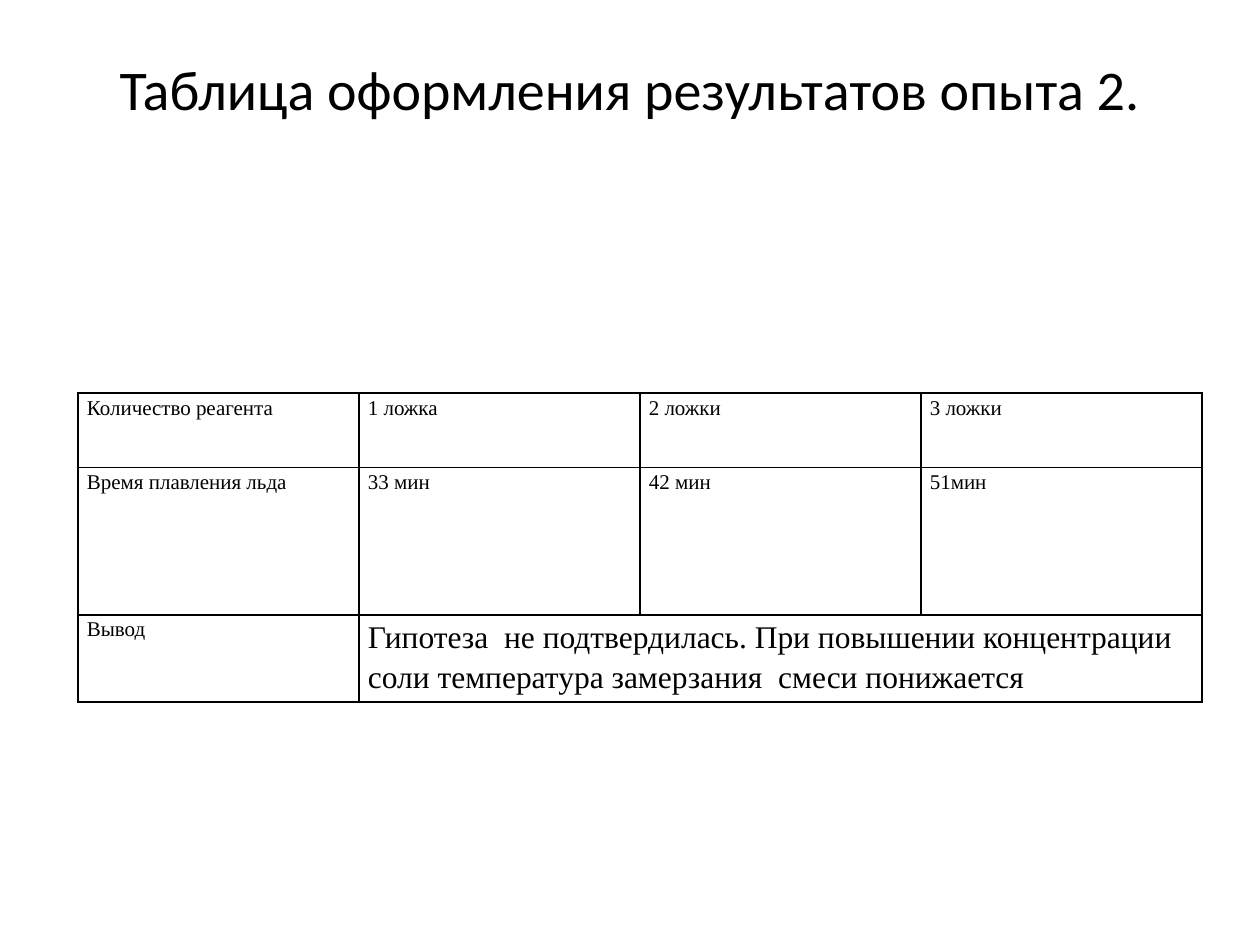
"""Build a slide with the results table of the second experiment."""
from lxml import etree
from pptx import Presentation
from pptx.dml.color import RGBColor
from pptx.enum.text import MSO_ANCHOR, PP_ALIGN
from pptx.oxml.ns import qn
from pptx.util import Inches, Pt

TITLE = "Таблица оформления результатов опыта 2."
ROWS = [
    ["Количество реагента", "1 ложка", "2 ложки", "3 ложки"],
    ["Время плавления льда", "33 мин", "42 мин", "51мин"],
    ["Вывод", "Гипотеза  не подтвердилась. При повышении концентрации "
              "соли температура замерзания  смеси понижается"],
]
ROW_HEIGHTS = [0.59, 1.17, 0.59]
COL_WIDTH = 2.23
COLS = len(ROWS[0])
BODY_SIZE, CONCLUSION_SIZE = 12, 18
BLACK = RGBColor(0, 0, 0)
MIDDLE, TOP = MSO_ANCHOR.MIDDLE, MSO_ANCHOR.TOP
CENTER = PP_ALIGN.CENTER


def add_run(p, text, size, font):
    r = p.add_run()
    r.text = text
    r.font.size = Pt(size)
    r.font.name = font
    r.font.color.rgb = BLACK


def set_borders(cell):
    tc_pr = cell._tc.get_or_add_tcPr()
    for i, side in enumerate(("a:lnL", "a:lnR", "a:lnT", "a:lnB")):
        ln = etree.Element(qn(side), w=str(Pt(1)))
        fill = etree.SubElement(ln, qn("a:solidFill"))
        etree.SubElement(fill, qn("a:srgbClr"), val=str(BLACK))
        tc_pr.insert(i, ln)


def add_title(s):
    tf = s.shapes.add_textbox(Inches(0.5), Inches(0.3), Inches(9), Inches(1.25)).text_frame
    tf.word_wrap = True
    tf.vertical_anchor = MIDDLE
    tf.margin_bottom = Inches(0.5)
    p = tf.paragraphs[0]
    p.alignment = CENTER
    add_run(p, TITLE, 32, "Calibri")


def add_results(s):
    table = s.shapes.add_table(len(ROWS), COLS, Inches(0.62), Inches(3.12),
                               Inches(COL_WIDTH * COLS), Inches(sum(ROW_HEIGHTS))).table
    table.first_row = table.horz_banding = False
    for col in table.columns:
        col.width = Inches(COL_WIDTH)
    for row, height in zip(table.rows, ROW_HEIGHTS):
        row.height = Inches(height)
    last = len(ROWS) - 1
    table.cell(last, 1).merge(table.cell(last, COLS - 1))
    for i in range(len(ROWS)):
        for j in range(COLS):
            cell = table.cell(i, j)
            cell.fill.background()
            set_borders(cell)
            cell.margin_left = cell.margin_right = Inches(0.07)
            cell.margin_top = cell.margin_bottom = 0
            cell.vertical_anchor = TOP
            if j < len(ROWS[i]):
                p = cell.text_frame.paragraphs[0]
                p.line_spacing = 1.15
                size = CONCLUSION_SIZE if cell.is_merge_origin else BODY_SIZE
                add_run(p, ROWS[i][j], size, "Times New Roman")


def main():
    prs = Presentation()
    prs.slide_width, prs.slide_height = Inches(10), Inches(7.5)
    s = prs.slides.add_slide(prs.slide_layouts[6])
    add_title(s)
    add_results(s)
    prs.save("out.pptx")


if __name__ == "__main__":
    main()
